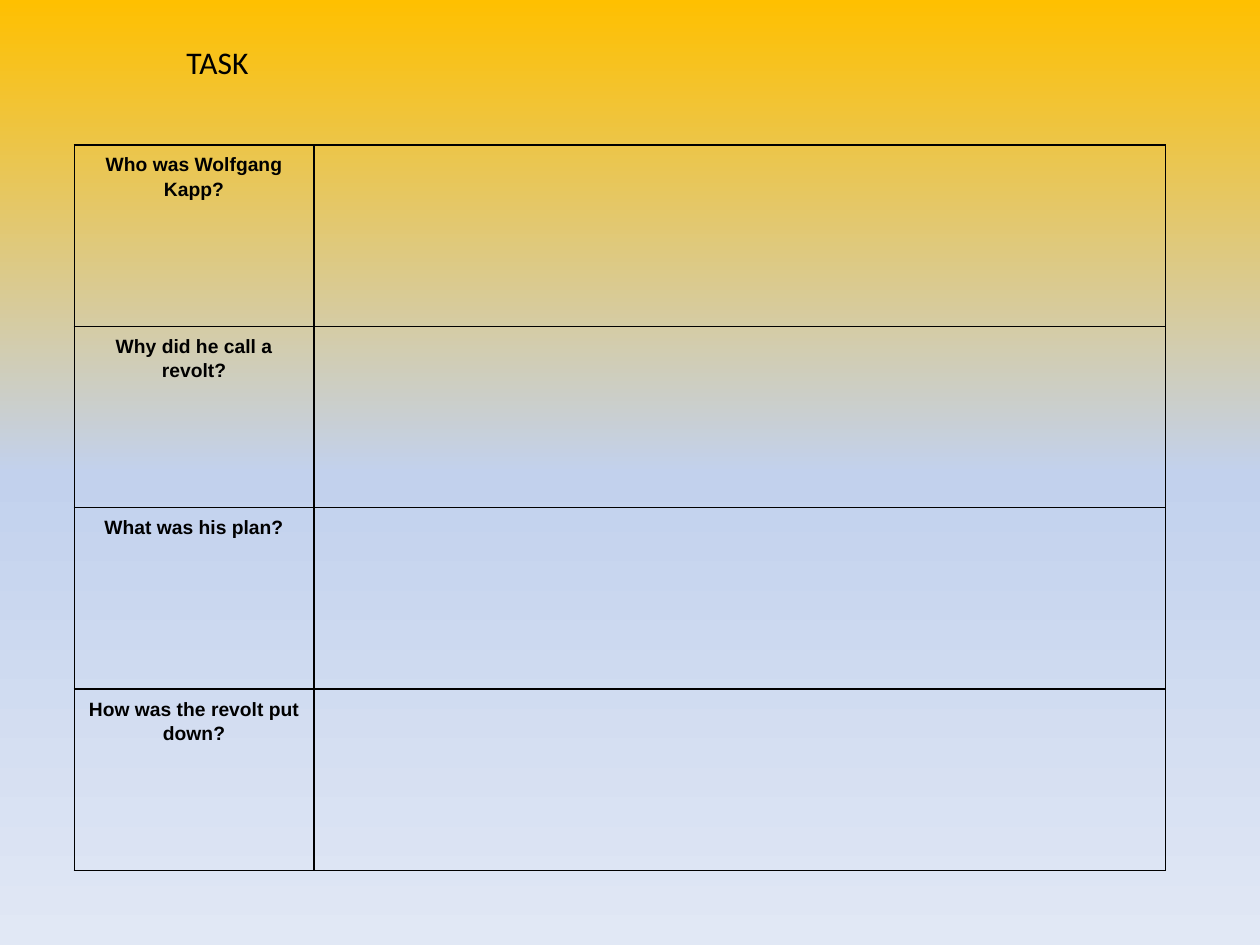
import copy

import pptx
import pptx.dml.color
import pptx.enum.text
import pptx.oxml
import pptx.oxml.ns
import pptx.util
from pptx.util import Inches

BLACK = "000000"
QUESTIONS = [
    "Who was Wolfgang Kapp?",
    "Why did he call a revolt?",
    "What was his plan?",
    "How was the revolt put down?",
]


def rgb(value):
    return pptx.dml.color.RGBColor.from_string(value)


class Deck:
    title_font = "Calibri"
    body_font = "Arial"
    border_width = pptx.util.Pt(1)

    def __init__(self):
        self.prs = pptx.Presentation()
        self.prs.slide_width = Inches(10)
        self.prs.slide_height = Inches(7.5)

    def add_slide(self):
        self.s = self.prs.slides.add_slide(self.prs.slide_layouts[5])

    def background(self, stops):
        fill = self.s.background.fill
        fill.gradient()
        fill.gradient_angle = 270
        gs_list = self.s._element.xpath(".//a:gsLst")[0]
        while len(gs_list) < len(stops):
            gs_list.append(copy.deepcopy(gs_list[0]))
        for stop, (position, color) in zip(fill.gradient_stops, stops):
            stop.position = position
            stop.color.rgb = rgb(color)

    def font(self, p, name, size, bold=False):
        p.font.name = name
        p.font.size = pptx.util.Pt(size)
        p.font.bold = bold
        p.font.color.rgb = rgb(BLACK)

    def title(self, text, left, top, width, height):
        sp = self.s.shapes.title
        sp.left, sp.top = Inches(left), Inches(top)
        sp.width, sp.height = Inches(width), Inches(height)
        tf = sp.text_frame
        tf.text = text
        tf.word_wrap = True
        tf.auto_size = pptx.enum.text.MSO_AUTO_SIZE.NONE
        tf.vertical_anchor = pptx.enum.text.MSO_ANCHOR.TOP
        p = tf.paragraphs[0]
        p.alignment = pptx.enum.text.PP_ALIGN.LEFT
        self.font(p, self.title_font, 18)

    def borders(self, cell):
        tc_pr = cell._tc.get_or_add_tcPr()
        for side in ("lnL", "lnR", "lnT", "lnB"):
            tc_pr.append(pptx.oxml.parse_xml(
                f'<a:{side} {pptx.oxml.ns.nsdecls("a")} w="{self.border_width}">'
                f'<a:solidFill><a:srgbClr val="{BLACK}"/></a:solidFill></a:{side}>'
            ))

    def question_table(self, questions, left, top, col_widths, row_height):
        table = self.s.shapes.add_table(
            len(questions), len(col_widths), Inches(left), Inches(top),
            Inches(sum(col_widths)), Inches(row_height * len(questions)),
        ).table
        table.first_row = table.horz_banding = False
        for column, width in zip(table.columns, col_widths):
            column.width = Inches(width)
        for cell in table.iter_cells():
            cell.margin_left = cell.margin_right = Inches(0.09)
            self.borders(cell)
            cell.fill.background()
        for i, question in enumerate(questions):
            tf = table.cell(i, 0).text_frame
            tf.text = question
            p = tf.paragraphs[0]
            p.alignment = pptx.enum.text.PP_ALIGN.CENTER
            p.line_spacing = 1.15
            p.space_after = pptx.util.Pt(10)
            self.font(p, self.body_font, 11, bold=True)


def main():
    deck = Deck()
    deck.add_slide()
    deck.background([(0, "FFC000"), (0.5, "C2D1ED"), (1, "E1E8F5")])
    deck.question_table(QUESTIONS, 0.59, 1.15, [1.9, 6.76], 1.44)
    deck.title("TASK", 1.38, 0.29, 5.51, 0.4)
    deck.prs.save("out.pptx")


if __name__ == "__main__":
    main()
